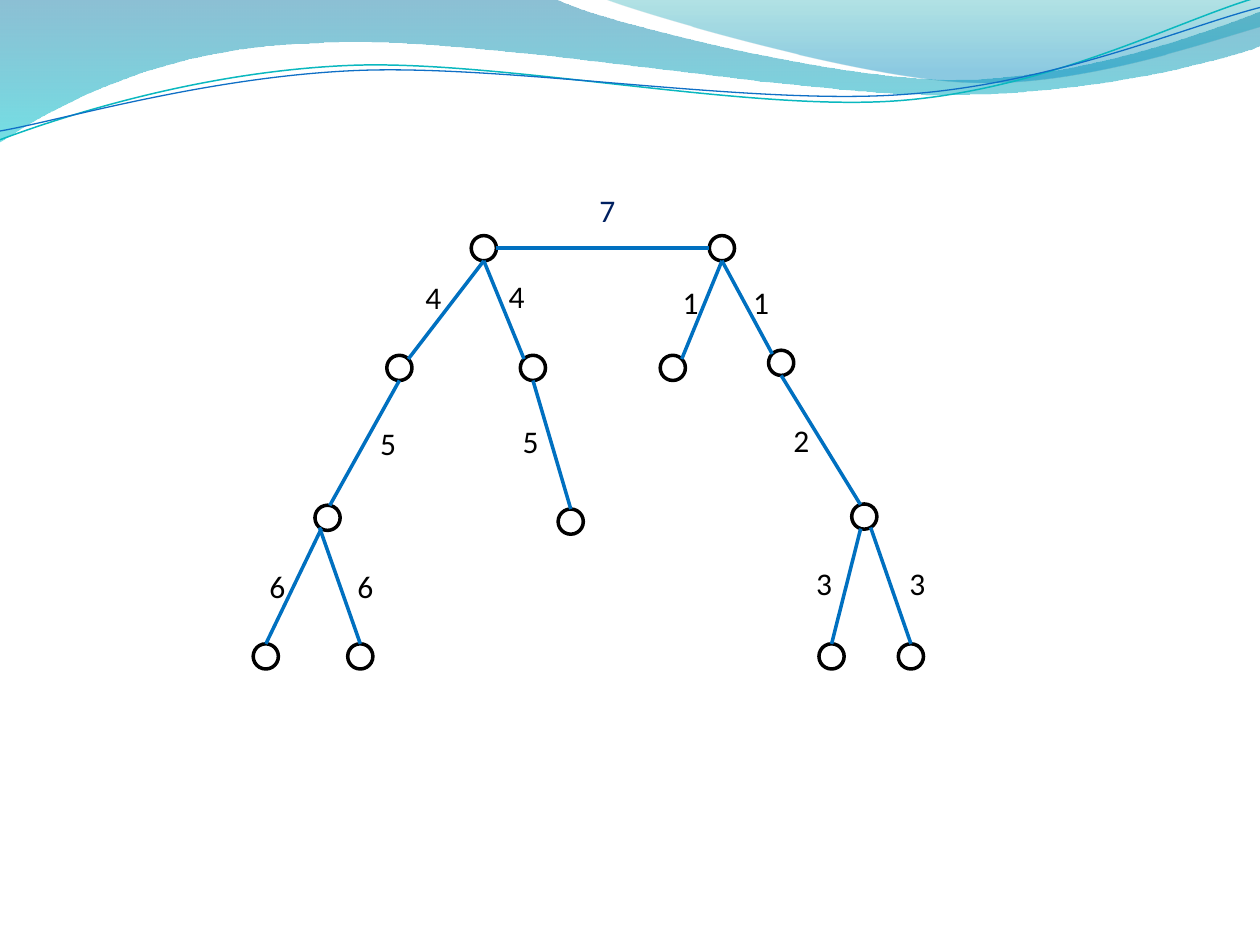
from math import cos, radians, sin

from lxml.etree import SubElement
from pptx import Presentation
from pptx.dml.color import RGBColor
from pptx.enum.shapes import MSO_CONNECTOR as Connector, MSO_SHAPE as Shape
from pptx.enum.text import MSO_AUTO_SIZE as AutoSize, PP_ALIGN as Align
from pptx.oxml.ns import qn
from pptx.util import Inches, Pt

COLORS = {
    "text": "000000", "root_text": "002060", "node": "000000", "edge": "0070C0",
    "deep_blue": "0074A1", "aqua": "00C6CF", "teal": "00A1A9", "sky": "008BBF",
    "teal_line": "0AB8BF", "blue_line": "0F6FC6",
}
FONT = "Calibri"
RADIUS = 0.1
WAVE_TILT = 2.7
WAVE_PIVOT = (5, 0.58)

BANDS = [
    ([[(0, 0)], [(4.4, -0.01)],
      [(4.76, 0.17), (6.64, 0.63), (7.58, 0.63)],
      [(8.53, 0.63), (9.58, 0.26), (10, 0.09)],
      [(10.01, 0.36)],
      [(9.83, 0.44), (8.7, 0.76), (7.46, 0.75)],
      [(6.22, 0.75), (3.82, 0.28), (2.57, 0.34)],
      [(1.29, 0.36), (0.46, 0.83), (-0.01, 1.13)],
      [(0, 0)]],
     [(0, "deep_blue", 45), (1, "aqua", 55)]),
    ([[(4.79, -0.01)],
      [(5.09, 0.11), (6.82, 0.62), (7.69, 0.65)],
      [(8.56, 0.69), (9.61, 0.32), (10, 0.21)],
      [(10, 0)], [(4.79, -0.01)]],
     [(0, "teal", 30), (0.8, "sky", 45)]),
]
WAVE_LINES = [
    ([[(0, 1.11)],
      [(0.48, 0.93), (1.58, 0.57), (2.77, 0.52)],
      [(3.95, 0.47), (5.93, 0.89), (7.13, 0.8)],
      [(8.33, 0.71), (9.38, 0.15), (9.98, -0.02)]], "teal_line", 0.85),
    ([[(0, 1.04)],
      [(0.47, 0.96), (1.64, 0.61), (2.83, 0.56)],
      [(4.03, 0.51), (5.97, 0.84), (7.17, 0.75)],
      [(8.36, 0.67), (9.41, 0.21), (10, 0.06)]], "blue_line", 0.75),
]

NODES = {
    "left_root": (1.84, 0.47), "right_root": (3.73, 0.47),
    "left_outer": (1.17, 1.42), "left_inner": (2.23, 1.42),
    "right_inner": (3.34, 1.42), "right_outer": (4.2, 1.38),
    "left_fork": (0.6, 2.61), "inner_leaf": (2.53, 2.64), "right_fork": (4.86, 2.6),
    "leaf_1": (0.11, 3.71), "leaf_2": (0.86, 3.71),
    "leaf_3": (4.6, 3.71), "leaf_4": (5.23, 3.71),
}
EDGES = [
    ("left_root", 0, "right_root", 180, "7", 2.82, -0.03),
    ("left_root", 90, "left_outer", 315, "4", 1.44, 0.66),
    ("left_root", 90, "left_inner", 225, "4", 2.1, 0.65),
    ("right_root", 90, "right_inner", 315, "1", 3.48, 0.7),
    ("right_root", 90, "right_outer", 225, "1", 4.04, 0.7),
    ("left_outer", 90, "left_fork", 280, "5", 1.08, 1.82),
    ("left_inner", 90, "inner_leaf", 270, "5", 2.21, 1.8),
    ("right_outer", 90, "right_fork", 252, "2", 4.36, 1.79),
    ("left_fork", 120, "leaf_1", 270, "6", 0.2, 2.95),
    ("left_fork", 130, "leaf_2", 270, "6", 0.9, 2.95),
    ("right_fork", 107, "leaf_3", 270, "3", 4.54, 2.93),
    ("right_fork", 60, "leaf_4", 270, "3", 5.28, 2.93),
]


def color(name):
    return RGBColor.from_string(COLORS[name])


def turn(point, degrees):
    dx, dy = point[0] - WAVE_PIVOT[0], point[1] - WAVE_PIVOT[1]
    cosine, sine = cos(radians(degrees)), sin(radians(degrees))
    return WAVE_PIVOT[0] + dx * cosine - dy * sine, WAVE_PIVOT[1] + dx * sine + dy * cosine


def add_outline(page, segments, left, top, close):
    points = [(Inches(left + x), Inches(top + y)) for segment in segments for x, y in segment]
    builder = page.shapes.build_freeform(*points[0])
    builder.add_line_segments(points[1:], close=close)
    shape = builder.convert_to_shape()
    shape.shadow.inherit = False
    lines = iter(list(shape._element.spPr.iter(qn("a:lnTo"))))
    for segment in segments[1:]:
        steps = [next(lines) for _ in segment]
        if len(steps) == 3:
            curve = SubElement(steps[0].getparent(), qn("a:cubicBezTo"))
            steps[0].addprevious(curve)
            for step in steps:
                curve.append(step[0])
                step.getparent().remove(step)
    return shape


def add_waves(page, left, top):
    for segments, stops in BANDS:
        band = add_outline(page, segments, left, top, True)
        band.line.fill.background()
        band.fill.gradient()
        band.fill.gradient_angle = 270
        for stop, (position, name, _) in zip(band.fill.gradient_stops, stops):
            stop.position = position
            stop.color.rgb = color(name)
        tints = band._element.spPr.iter(qn("a:srgbClr"))
        for tint, (_, _, opacity) in zip(tints, stops):
            SubElement(tint, qn("a:alpha")).set("val", str(opacity * 1000))
    for segments, name, width in WAVE_LINES:
        level = [[turn(point, WAVE_TILT) for point in segment] for segment in segments]
        wave = add_outline(page, level, left, top, False)
        wave.rotation = 360 - WAVE_TILT
        wave.fill.background()
        wave.line.color.rgb = color(name)
        wave.line.width = Pt(width)


def add_node(page, x, y):
    node = page.shapes.add_shape(Shape.OVAL, Inches(x - RADIUS), Inches(y - RADIUS),
                                 Inches(2 * RADIUS), Inches(2 * RADIUS))
    node.shadow.inherit = False
    node.fill.background()
    node.line.color.rgb = color("node")
    node.line.width = Pt(2)


def add_edge(page, start, end):
    edge = page.shapes.add_connector(Connector.STRAIGHT,
                                     *(Inches(value) for value in (*start, *end)))
    edge.line.color.rgb = color("edge")
    edge.line.width = Pt(2)
    SubElement(edge._element.spPr, qn("a:effectLst"))


def add_label(page, text, x, y, color_name):
    width = 0.45
    box = page.shapes.add_textbox(Inches(x - width / 2), Inches(y), Inches(width), Inches(0.4))
    frame = box.text_frame
    frame.word_wrap = True
    frame.auto_size = AutoSize.SHAPE_TO_FIT_TEXT
    frame.text = text
    para = frame.paragraphs[0]
    para.alignment = Align.CENTER
    font = para.runs[0].font
    font.name = FONT
    font.size = Pt(18)
    font.color.rgb = color(color_name)


def add_tree(page, left, top):
    centers = {name: (left + x, top + y) for name, (x, y) in NODES.items()}

    def rim(name, angle):
        x, y = centers[name]
        return x + RADIUS * cos(radians(angle)), y + RADIUS * sin(radians(angle))

    for x, y in centers.values():
        add_node(page, x, y)
    for parent, out_angle, child, in_angle, text, x, y in EDGES:
        add_edge(page, rim(parent, out_angle), rim(child, in_angle))
        name = "root_text" if child == "right_root" else "text"
        add_label(page, text, left + x, top + y, name)


def main():
    deck = Presentation()
    deck.slide_width = Inches(10)
    deck.slide_height = Inches(7.5)
    page = deck.slides.add_slide(deck.slide_layouts[6])
    add_waves(page, 0, 0)
    add_tree(page, 2, 1.5)
    deck.save("out.pptx")


if __name__ == "__main__":
    main()
